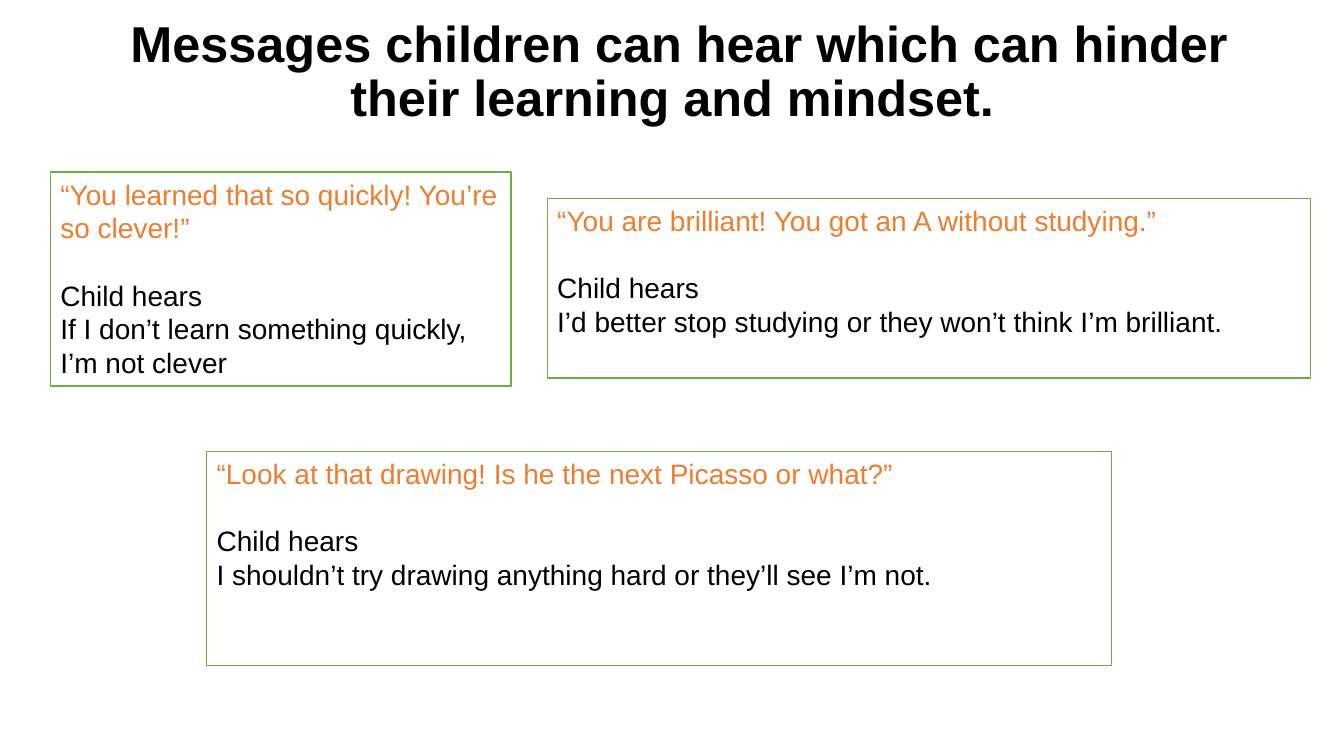
"""Slide on messages that can hinder children's learning and mindset."""
from dataclasses import dataclass

from pptx import Presentation
from pptx import util as u
from pptx.dml.color import RGBColor
from pptx.enum import shapes, text

COLS, ROWS = 32, 18
FONT = "Arial"
BLACK, WHITE, GREEN, ORANGE = "000000", "FFFFFF", "70AD47", "ED7D31"
LINE_GAP = 24


@dataclass(frozen=True)
class Area:
    """Place on the slide, in grid columns and rows."""
    col: float
    row: float
    cols: float
    rows: float


@dataclass(frozen=True)
class Message:
    """What an adult says and what the child hears."""
    area: Area
    praise: str
    heard: str


TITLE = "Messages children can hear which can hinder their learning and mindset. "
TITLE_AREA = Area(2.38, 0, 27.6, 3.48)
MESSAGES = [
    Message(Area(1.2, 4.1, 10.97, 5.09),
            "“You learned that so quickly! You’re so clever!”",
            "If I don’t learn something quickly, I’m not clever"),
    Message(Area(13.03, 4.73, 18.17, 4.27),
            "“You are brilliant! You got an A without studying.”",
            "I’d better stop studying or they won’t think I’m brilliant."),
    Message(Area(4.92, 10.75, 21.55, 5.09),
            "“Look at that drawing! Is he the next Picasso or what?”",
            "I shouldn’t try drawing anything hard or they’ll see I’m not."),
]


def rgb(value: str) -> RGBColor:
    """Turn a hex string into a colour."""
    return RGBColor.from_string(value)


def box(prs, area: Area) -> tuple[int, int, int, int]:
    """Turn a grid area into left, top, width and height."""
    dx, dy = prs.slide_width / COLS, prs.slide_height / ROWS
    return (round(area.col * dx), round(area.row * dy),
            round(area.cols * dx), round(area.rows * dy))


def add_run(p, words: str, size: int, color: str, bold: bool = False) -> None:
    """Add one formatted run to a paragraph."""
    r = p.add_run()
    r.text = words
    r.font.name = FONT
    r.font.size = u.Pt(size)
    r.font.bold = bold
    r.font.color.rgb = rgb(color)


def add_title(prs, s) -> None:
    """Move and fill the title placeholder."""
    sp = s.shapes.title
    sp.left, sp.top, sp.width, sp.height = box(prs, TITLE_AREA)
    tf = sp.text_frame
    tf.auto_size = text.MSO_AUTO_SIZE.NONE
    tf.vertical_anchor = text.MSO_ANCHOR.MIDDLE
    p = tf.paragraphs[0]
    p.alignment = text.PP_ALIGN.CENTER
    p.line_spacing = 0.9
    add_run(p, TITLE, 36, BLACK, bold=True)


def add_message(prs, s, message: Message) -> None:
    """Draw one outlined message box."""
    sp = s.shapes.add_shape(shapes.MSO_SHAPE.RECTANGLE, *box(prs, message.area))
    sp.shadow.inherit = False
    sp.fill.solid()
    sp.fill.fore_color.rgb = rgb(WHITE)
    sp.line.color.rgb = rgb(GREEN)
    sp.line.width = u.Pt(1)
    tf = sp.text_frame
    tf.word_wrap = True
    tf.vertical_anchor = text.MSO_ANCHOR.TOP
    lines = [(message.praise, ORANGE, LINE_GAP),
             ("Child hears", BLACK, 0),
             (message.heard, BLACK, 0)]
    for i, (words, color, gap) in enumerate(lines):
        p = tf.add_paragraph() if i else tf.paragraphs[0]
        p.alignment = text.PP_ALIGN.LEFT
        p.space_after = u.Pt(gap)
        add_run(p, words, 20, color)


def main() -> None:
    """Build and save the slide."""
    prs = Presentation()
    prs.slide_width, prs.slide_height = u.Inches(13.33), u.Inches(7.5)
    s = prs.slides.add_slide(prs.slide_layouts[5])
    add_title(prs, s)
    for message in MESSAGES:
        add_message(prs, s, message)
    prs.save("out.pptx")


if __name__ == "__main__":
    main()
